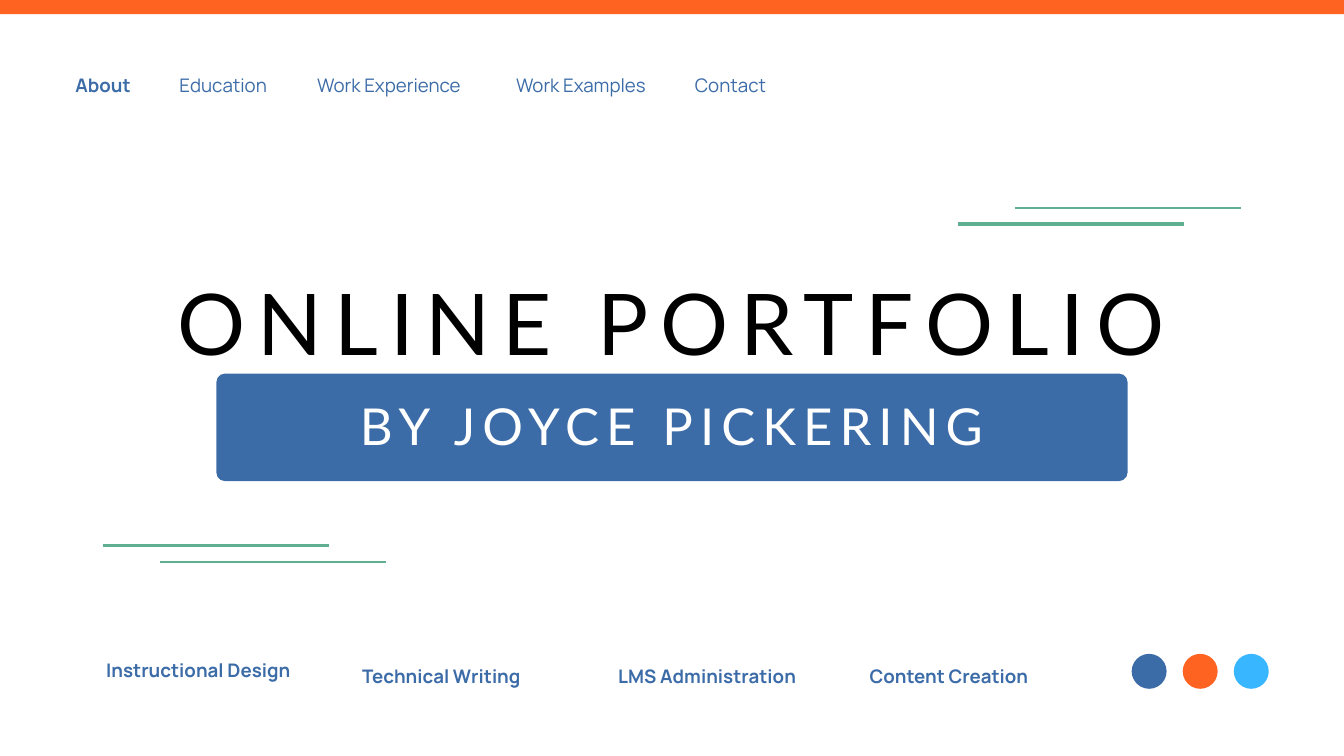
from lxml.etree import SubElement
from pptx import Presentation
from pptx.dml.color import RGBColor
from pptx.enum.shapes import MSO_CONNECTOR, MSO_SHAPE
from pptx.enum.text import MSO_ANCHOR, MSO_AUTO_SIZE, PP_ALIGN
from pptx.oxml.ns import qn
from pptx.util import Pt

PX = 9144  # EMU per px, 100 px to the inch
WIDTH, HEIGHT = 2000, 1125

BLUE = RGBColor(0x3C, 0x6C, 0xA8)
ORANGE = RGBColor(0xFF, 0x63, 0x22)
SKY = RGBColor(0x38, 0xB6, 0xFF)
GREEN = RGBColor(0x5E, 0xB0, 0x90)
BLACK = RGBColor(0, 0, 0)
WHITE = RGBColor(0xFF, 0xFF, 0xFF)

TITLE = "ONLINE PORTFOLIO"
AUTHOR = "BY JOYCE PICKERING"
# text, left, width, bold
NAV_TOP = 105
NAV = [
    ("About", 112, 199, True),
    ("Education", 267, 169, False),
    ("Work Experience", 472, 244, False),
    ("Work Examples", 768, 216, False),
    ("Contact", 1034, 175, False),
]
# text, left, top, width
SKILLS = [
    ("Instructional Design", 158, 975, 324),
    ("Technical Writing", 539, 984, 324),
    ("LMS Administration", 920, 984, 317),
    ("Content Creation", 1294, 984, 317),
]
# left, top, weight in points
RULE_LEN = 336
RULES = [(154, 812, 3.75), (1510, 310, 2.25), (1426, 333, 3.75), (238, 837, 2.25)]
DOTS = [BLUE, ORANGE, SKY]
DOT_LEFT, DOT_TOP, DOT_SIZE, DOT_STEP = 1684, 973, 52, 76


def box(*lengths):
    return [n * PX for n in lengths]


def add_block(slide, kind, place, color):
    shape = slide.shapes.add_shape(kind, *box(*place))
    shape.shadow.inherit = False
    shape.fill.solid()
    shape.fill.fore_color.rgb = color
    shape.line.fill.background()
    return shape


def add_rule(slide, left, top, weight):
    rule = slide.shapes.add_connector(
        MSO_CONNECTOR.STRAIGHT, *box(left, top, left + RULE_LEN, top))
    rule.line.color.rgb = GREEN
    rule.line.width = Pt(weight)
    SubElement(rule._element.spPr, qn("a:effectLst"))


def write(shape, text, font, size, leading, color, align=PP_ALIGN.LEFT, bold=False, track=0):
    """Fill a shape with one styled line; track is the letter spacing in points."""
    frame = shape.text_frame
    frame.text = text
    frame.word_wrap = True
    frame.auto_size = MSO_AUTO_SIZE.NONE
    frame.vertical_anchor = MSO_ANCHOR.TOP
    frame.margin_left = frame.margin_right = frame.margin_top = frame.margin_bottom = 0
    para = frame.paragraphs[0]
    para.alignment = align
    para.line_spacing = Pt(leading)
    para.space_before = Pt(0)
    run = para.runs[0]
    run.font.name = font
    run.font.size = Pt(size)
    run.font.bold = bold
    run.font.color.rgb = color
    if track:
        run.font._element.set("spc", str(round(track * 100)))


def add_heading(holder, text, place, size, color, track):
    holder.left, holder.top, holder.width, holder.height = box(*place)
    write(holder, text, "Lato", size, size, color, PP_ALIGN.CENTER, track=track)


def add_label(slide, text, left, top, width, bold):
    label = slide.shapes.add_textbox(*box(left, top, width, 40))
    write(label, text, "Manrope", 20, 28, BLUE, bold=bold)


def main():
    deck = Presentation()
    deck.slide_width, deck.slide_height = box(WIDTH, HEIGHT)
    slide = deck.slides.add_slide(deck.slide_layouts[0])

    banner = add_block(slide, MSO_SHAPE.ROUNDED_RECTANGLE, (322, 556, 1356, 160), BLUE)
    banner.adjustments[0] = 0.08
    slide.shapes._spTree.insert(2, banner._element)  # behind the headings

    add_heading(slide.shapes.title, TITLE, (135, 428, 1730, 133), 91.2, BLACK, 12.8)
    add_heading(slide.placeholders[1], AUTHOR, (380, 603, 1239, 78), 54.5, WHITE, 7.6)

    add_block(slide, MSO_SHAPE.RECTANGLE, (0, 0, WIDTH, 21), ORANGE)
    for rule in RULES:
        add_rule(slide, *rule)
    for text, left, width, bold in NAV:
        add_label(slide, text, left, NAV_TOP, width, bold)
    for text, left, top, width in SKILLS:
        add_label(slide, text, left, top, width, True)
    for i, color in enumerate(DOTS):
        place = (DOT_LEFT + i * DOT_STEP, DOT_TOP, DOT_SIZE, DOT_SIZE)
        add_block(slide, MSO_SHAPE.OVAL, place, color)

    deck.save("out.pptx")


if __name__ == "__main__":
    main()
